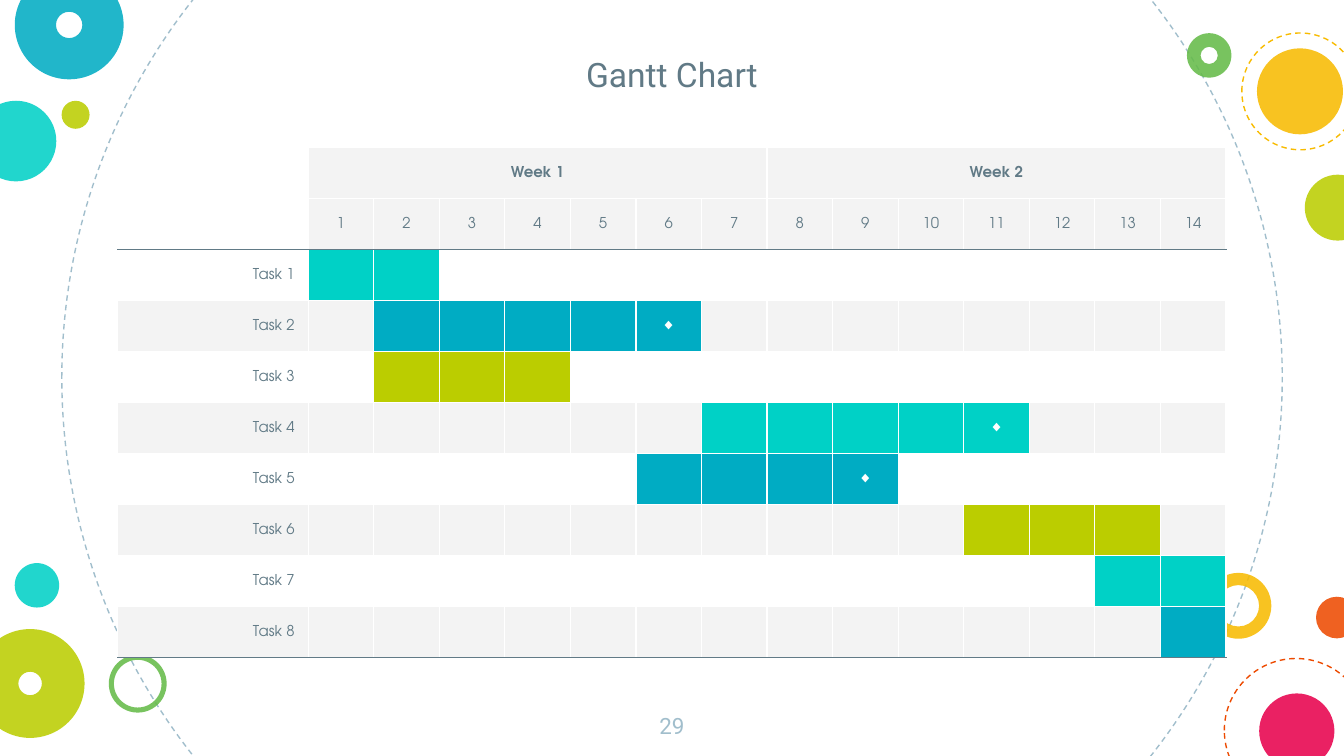
import pptx
import pptx.dml.color
import pptx.enum.dml
import pptx.enum.shapes
import pptx.enum.text
import pptx.oxml
import pptx.oxml.ns
import pptx.util
from lxml import etree

Pt = pptx.util.Pt
ALIGN = pptx.enum.text.PP_ALIGN
ANCHOR = pptx.enum.text.MSO_ANCHOR
SHAPE = pptx.enum.shapes.MSO_SHAPE
qn = pptx.oxml.ns.qn

COLOURS = {
    "white": "FFFFFF", "slate": "617A86", "mist": "A1BECC", "grey": "F3F3F3",
    "teal": "00D1C6", "blue": "00ACC3", "lime": "BBCD00", "green": "65BB48",
    "yellow": "F8BB00", "orange": "ED4A00", "pink": "E8004C",
}
DAYS = 14
WEEK = 7
HEADER_ROWS = 2

# Dashed circles: left, top, diameter, colour
ORBITS = [
    (33.1, -124.6, 653.8, "mist"),
    (655.9, 352.8, 77, "orange"),
    (665.3, 17.7, 62.6, "yellow"),
]
# Filled circles: left, top, diameter, colour, ring thickness (None = solid)
BUBBLES = [
    (-13, 54, 43.2, "teal", None),
    (645.8, 306.9, 35.3, "yellow", 0.186),
    (7.9, -15.8, 58.3, "blue", 0.379),
    (33, 54, 15, "lime", None),
    (58.3, 350.8, 31, "green", 0.088),
    (705, 319.7, 22.3, "orange", None),
    (-13, 337, 58.3, "lime", 0.392),
    (674.6, 371.5, 40.3, "pink", None),
    (635.9, 17.8, 23.8, "green", 0.306),
    (673.4, 25.9, 46.1, "yellow", None),
    (699, 93.6, 35.3, "lime", None),
    (7.9, 301.7, 23.8, "teal", None),
]
# Task, first day, last day, colour, has milestone on the last day
TASKS = [
    ("Task 1", 1, 2, "teal", False),
    ("Task 2", 2, 6, "blue", True),
    ("Task 3", 2, 4, "lime", False),
    ("Task 4", 7, 11, "teal", True),
    ("Task 5", 6, 9, "blue", True),
    ("Task 6", 11, 13, "lime", False),
    ("Task 7", 13, 14, "teal", False),
    ("Task 8", 14, 14, "blue", False),
]


def rgb(name):
    return pptx.dml.color.RGBColor.from_string(COLOURS[name])


def write(frame, text, size=8, font="TeX Gyre Adventor", colour="slate",
          bold=False, align=ALIGN.CENTER):
    paragraph = frame.paragraphs[0]
    paragraph.alignment = align
    run = paragraph.add_run()
    run.text = text
    run.font.size = Pt(size)
    run.font.name = font
    run.font.bold = bold
    run.font.color.rgb = rgb(colour)


class GanttSlide:
    heading_font = "Roboto"
    line_width = 0.75
    opacity = 87

    def __init__(self, deck):
        self.slide = deck.slides.add_slide(deck.slide_layouts[6])

    def orbit(self, left, top, diameter, colour):
        circle = self.slide.shapes.add_shape(
            SHAPE.OVAL, Pt(left), Pt(top), Pt(diameter), Pt(diameter))
        circle.shadow.inherit = False
        circle.fill.background()
        circle.line.color.rgb = rgb(colour)
        circle.line.width = Pt(self.line_width)
        circle.line.dash_style = pptx.enum.dml.MSO_LINE.DASH

    def bubble(self, left, top, diameter, colour, ring):
        kind = SHAPE.DONUT if ring else SHAPE.OVAL
        circle = self.slide.shapes.add_shape(
            kind, Pt(left), Pt(top), Pt(diameter), Pt(diameter))
        if ring:
            circle.adjustments[0] = ring
        circle.shadow.inherit = False
        circle.line.fill.background()
        circle.fill.solid()
        circle.fill.fore_color.rgb = rgb(colour)
        tint = circle._element.spPr.find(qn("a:solidFill"))[0]
        etree.SubElement(tint, qn("a:alpha"), val=str(self.opacity * 1000))

    def label(self, text, left, top, width, height, anchor, **style):
        frame = self.slide.shapes.add_textbox(
            Pt(left), Pt(top), Pt(width), Pt(height)).text_frame
        frame.word_wrap = True
        frame.vertical_anchor = anchor
        frame.margin_left = frame.margin_right = Pt(7.2)
        frame.margin_top = frame.margin_bottom = Pt(7.2)
        write(frame, text, font=self.heading_font, **style)

    def grid(self, left, top, row_count, label_width, day_width, row_height):
        widths = [label_width] + [day_width] * DAYS
        table = self.slide.shapes.add_table(
            row_count, len(widths), Pt(left), Pt(top),
            Pt(sum(widths)), Pt(row_height * row_count)).table
        table.first_row = table.horz_banding = False
        for column, width in zip(table.columns, widths):
            column.width = Pt(width)
        for row in table.rows:
            row.height = Pt(row_height)
        return table

    def border(self, cell, side, colour):
        edge = etree.SubElement(cell._tc.get_or_add_tcPr(), qn("a:ln" + side),
                                w=str(Pt(self.line_width)))
        paint = etree.SubElement(edge, qn("a:solidFill"))
        etree.SubElement(paint, qn("a:srgbClr"), val=COLOURS[colour])

    def cell(self, cell, text="", fill=None, above="white", below="white", **style):
        for side, colour in zip("LRTB", ("white", "white", above, below)):
            self.border(cell, side, colour)
        if fill:
            cell.fill.solid()
            cell.fill.fore_color.rgb = rgb(fill)
        else:
            cell.fill.background()
        cell.vertical_anchor = ANCHOR.MIDDLE
        if text:
            write(cell.text_frame, text, **style)
        else:
            # Keeps empty cells from stretching their row
            etree.SubElement(cell.text_frame.paragraphs[0]._p,
                             qn("a:endParaRPr"), sz="800")

    def schedule(self):
        last_row = HEADER_ROWS + len(TASKS) - 1
        table = self.grid(63, 79.2, last_row + 1, 102.05, 35.13, 27.3)

        # Week and day headers
        self.cell(table.cell(0, 0))
        self.cell(table.cell(1, 0), below="slate")
        for day in range(1, DAYS + 1):
            week, offset = divmod(day - 1, WEEK)
            title = "" if offset else f"Week {week + 1}"
            self.cell(table.cell(0, day), title, "grey", bold=True)
            self.cell(table.cell(1, day), str(day), "grey", below="slate")
        for first in range(1, DAYS + 1, WEEK):
            table.cell(0, first).merge(table.cell(0, first + WEEK - 1))

        # Task rows with their bars
        for row, (task, start, end, colour, milestone) in enumerate(TASKS, HEADER_ROWS):
            band = "grey" if row % 2 else None
            edges = {"above": "slate" if row == HEADER_ROWS else "white",
                     "below": "slate" if row == last_row else "white"}
            self.cell(table.cell(row, 0), task, band, align=ALIGN.RIGHT, **edges)
            for day in range(1, DAYS + 1):
                fill = colour if start <= day <= end else band
                mark = "◆" if milestone and day == end else ""
                self.cell(table.cell(row, day), mark, fill, colour="white", **edges)


def main():
    deck = pptx.Presentation()
    deck.slide_width, deck.slide_height = Pt(720), Pt(405)
    gantt = GanttSlide(deck)

    # Background circles
    for orbit in ORBITS:
        gantt.orbit(*orbit)
    for bubble in BUBBLES:
        gantt.bubble(*bubble)

    # Page number, schedule and title
    gantt.label("29", 341.5, 374.4, 37, 31, ANCHOR.TOP, size=12, colour="mist")
    gantt.schedule()
    gantt.label("Gantt Chart", 152.5, 7.2, 415, 50.4, ANCHOR.BOTTOM, size=18)

    deck.save("out.pptx")


if __name__ == "__main__":
    main()
